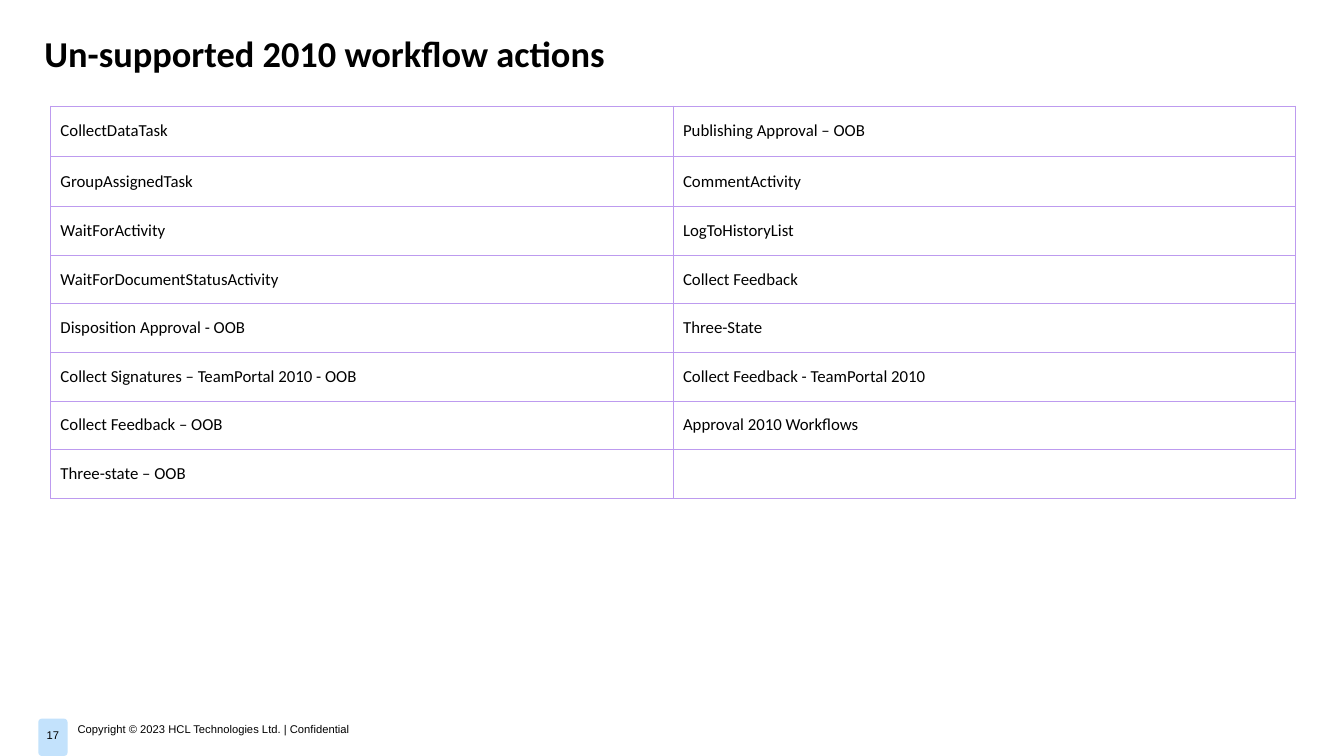
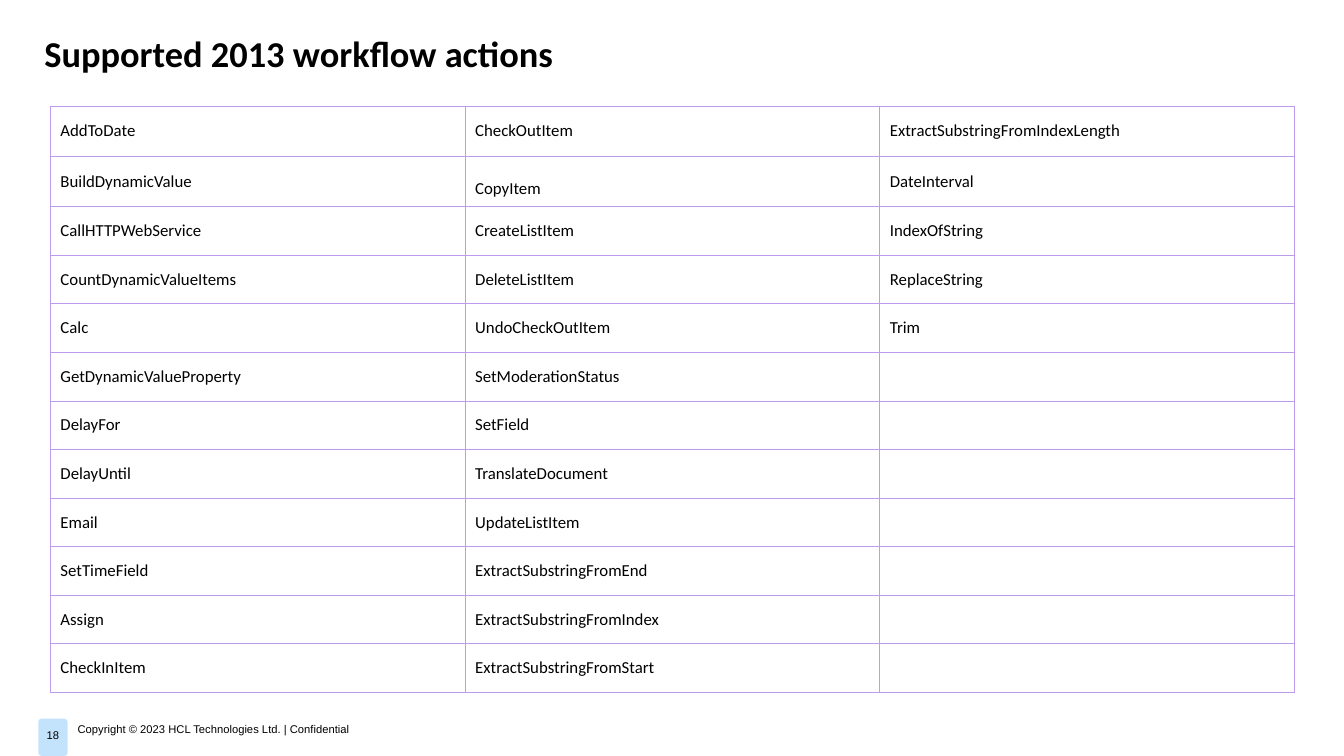
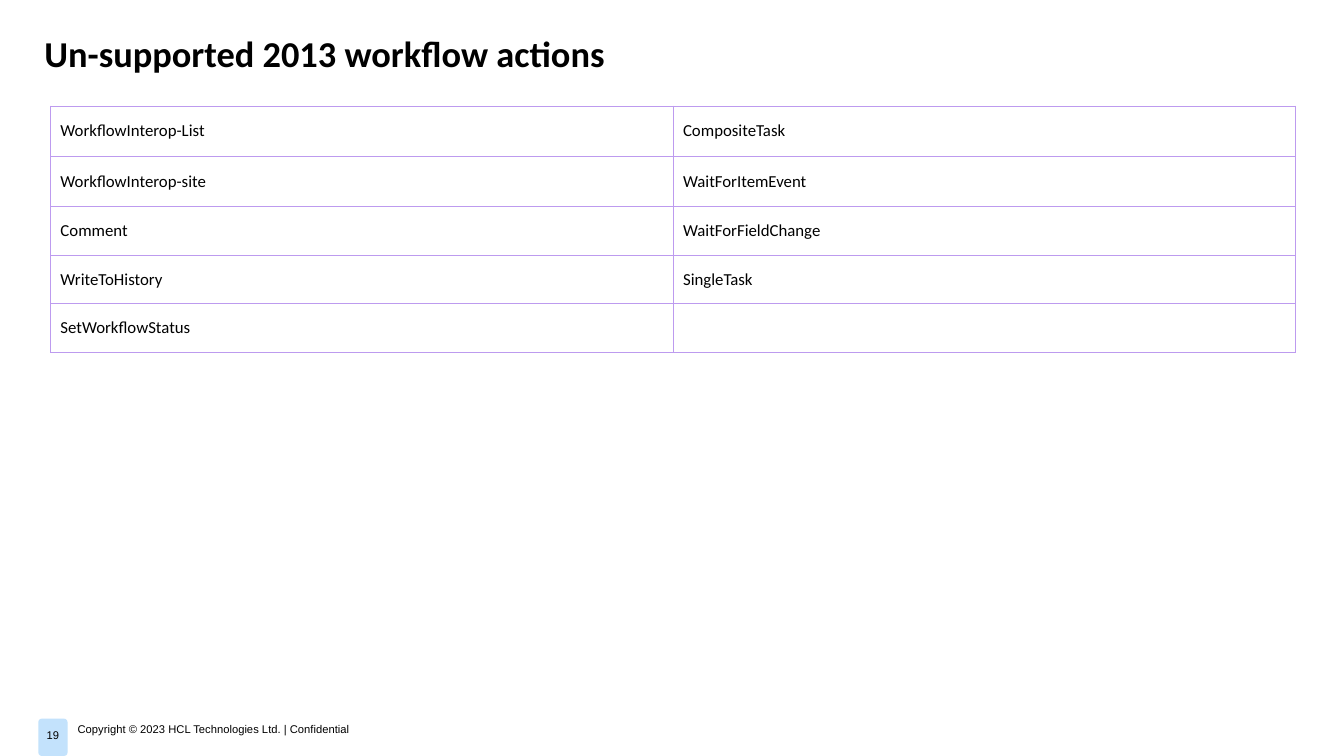
from itertools import zip_longest

from lxml.etree import SubElement
from pptx import Presentation
from pptx.dml.color import RGBColor
from pptx.enum.shapes import MSO_SHAPE
from pptx.enum.text import MSO_ANCHOR, PP_ALIGN
from pptx.oxml.ns import qn
from pptx.util import Inches, Pt

BLACK = RGBColor(0x00, 0x00, 0x00)
WHITE = RGBColor(0xFF, 0xFF, 0xFF)
SKY = RGBColor(0x8C, 0xC8, 0xFA)
LILAC = RGBColor(0xBD, 0x9B, 0xEF)
TAB_ALPHA = "52000"

TITLE_FONT = {"name": "Calibri", "size": Pt(26), "bold": True}
CELL_FONT = {"name": "Calibri", "size": Pt(12)}
FOOTER_FONT = {"name": "Arial", "size": Pt(8)}
FLUSH_LEFT = {"margin_left": 0}

COPYRIGHT = "Copyright © 2023 HCL Technologies Ltd. | Confidential"
TITLE_BOX = (0.44, 0.2, 10.32, 0.65)
FOOTER_BOX = (0.23, 7.13, 3.39, 0.37)
TABLE_AT = (0.5, 1.05)
TOP_ROWS = 2
TOP_ROW_HEIGHT = Inches(0.5)
ROW_HEIGHT = Inches(4.82) // 10
FIRST_PAGE = 17

PAGES = [
    ("Un-supported 2010 workflow actions", 12.35, [
        ["CollectDataTask", "GroupAssignedTask", "WaitForActivity",
         "WaitForDocumentStatusActivity", "Disposition Approval - OOB",
         "Collect Signatures – TeamPortal 2010 - OOB",
         "Collect Feedback – OOB", "Three-state – OOB"],
        ["Publishing Approval – OOB", "CommentActivity", "LogToHistoryList",
         "Collect Feedback", "Three-State",
         "Collect Feedback - TeamPortal 2010", "Approval 2010 Workflows"],
    ]),
    ("Supported 2013 workflow actions", 12.34, [
        ["AddToDate", "BuildDynamicValue", "CallHTTPWebService",
         "CountDynamicValueItems", "Calc", "GetDynamicValueProperty",
         "DelayFor", "DelayUntil", "Email", "SetTimeField", "Assign",
         "CheckInItem"],
        ["CheckOutItem", "CopyItem", "CreateListItem", "DeleteListItem",
         "UndoCheckOutItem", "SetModerationStatus", "SetField",
         "TranslateDocument", "UpdateListItem", "ExtractSubstringFromEnd",
         "ExtractSubstringFromIndex", "ExtractSubstringFromStart"],
        ["ExtractSubstringFromIndexLength", "DateInterval", "IndexOfString",
         "ReplaceString", "Trim"],
    ]),
    ("Un-supported 2013 workflow actions", 12.35, [
        ["WorkflowInterop-List", "WorkflowInterop-site", "Comment",
         "WriteToHistory", "SetWorkflowStatus"],
        ["CompositeTask", "WaitForItemEvent", "WaitForFieldChange",
         "SingleTask"],
    ]),
]
PARAGRAPH_FORMATS = {"CopyItem": {"line_spacing": 1.7, "space_after": Pt(6)}}


def apply_format(target, values):
    """Set each attribute in values on the target."""
    for name, value in values.items():
        setattr(target, name, value)


def write_text(para, text, font, **layout):
    """Put one formatted black span into a paragraph."""
    apply_format(para, layout)
    span = para.add_run()
    span.text = text
    apply_format(span.font, font)
    span.font.color.rgb = BLACK


def add_text(page, area, text, font, frame, **layout):
    """Add a one-paragraph text box in an area given in inches."""
    box = page.shapes.add_textbox(*map(Inches, area))
    apply_format(box.text_frame, {"word_wrap": True, **frame})
    write_text(box.text_frame.paragraphs[0], text, font, **layout)


def add_title(page, area, text):
    """Add the slide title."""
    frame = {**FLUSH_LEFT, "vertical_anchor": MSO_ANCHOR.MIDDLE}
    add_text(page, area, text, TITLE_FONT, frame)


def add_footer(page, area, number):
    """Add the page tab, copyright line and page number."""
    left, top, width, height = area
    tab = page.shapes.add_shape(
        MSO_SHAPE.ROUNDED_RECTANGLE,
        *map(Inches, (left + 0.15, top, 0.29, height)))
    tab.adjustments[0] = 0.12
    tab.shadow.inherit = False
    tab.line.fill.background()
    tab.fill.solid()
    tab.fill.fore_color.rgb = SKY
    colour = tab.fill._xPr.find(qn("a:solidFill"))[0]
    SubElement(colour, qn("a:alpha"), val=TAB_ALPHA)
    add_text(page, (left + 0.54, top, width - 0.54, 0.22), COPYRIGHT,
             FOOTER_FONT, {**FLUSH_LEFT, "word_wrap": False},
             line_spacing=0.9)
    add_text(page, (left, top + 0.05, 0.59, 0.33), str(number),
             FOOTER_FONT, {}, alignment=PP_ALIGN.CENTER)


def style_cell(cell):
    """Give a cell thin lilac borders and a white fill."""
    properties = cell._tc.get_or_add_tcPr()
    for side in ("lnL", "lnR", "lnT", "lnB"):
        border = SubElement(properties, qn(f"a:{side}"), w=str(Pt(0.5)))
        fill = SubElement(border, qn("a:solidFill"))
        SubElement(fill, qn("a:srgbClr"), val=str(LILAC))
    cell.fill.solid()
    cell.fill.fore_color.rgb = WHITE
    cell.vertical_anchor = MSO_ANCHOR.MIDDLE


def add_action_table(page, corner, width, columns):
    """Add a table of action names, listed column by column."""
    rows = list(zip_longest(*columns, fillvalue=""))
    heights = [TOP_ROW_HEIGHT if index < TOP_ROWS else ROW_HEIGHT
               for index in range(len(rows))]
    table = page.shapes.add_table(
        len(rows), len(columns), *map(Inches, corner),
        Inches(width), sum(heights)).table
    apply_format(table, {"first_row": False, "horz_banding": False})
    for column in table.columns:
        column.width = Inches(width) // len(columns)
    for row, height, names in zip(table.rows, heights, rows):
        row.height = height
        for cell, name in zip(row.cells, names):
            style_cell(cell)
            if name:
                write_text(cell.text_frame.paragraphs[0], name, CELL_FONT,
                           **PARAGRAPH_FORMATS.get(name, {}))


def add_action_page(deck, number, title, width, columns):
    """Add one slide with a title, an action table and the footer."""
    page = deck.slides.add_slide(deck.slide_layouts[6])
    add_footer(page, FOOTER_BOX, number)
    add_title(page, TITLE_BOX, title)
    add_action_table(page, TABLE_AT, width, columns)


def main():
    """Build and save the deck."""
    deck = Presentation()
    apply_format(deck, {"slide_width": Inches(13.33),
                        "slide_height": Inches(7.5)})
    for number, content in enumerate(PAGES, FIRST_PAGE):
        add_action_page(deck, number, *content)
    deck.save("out.pptx")


if __name__ == "__main__":
    main()
